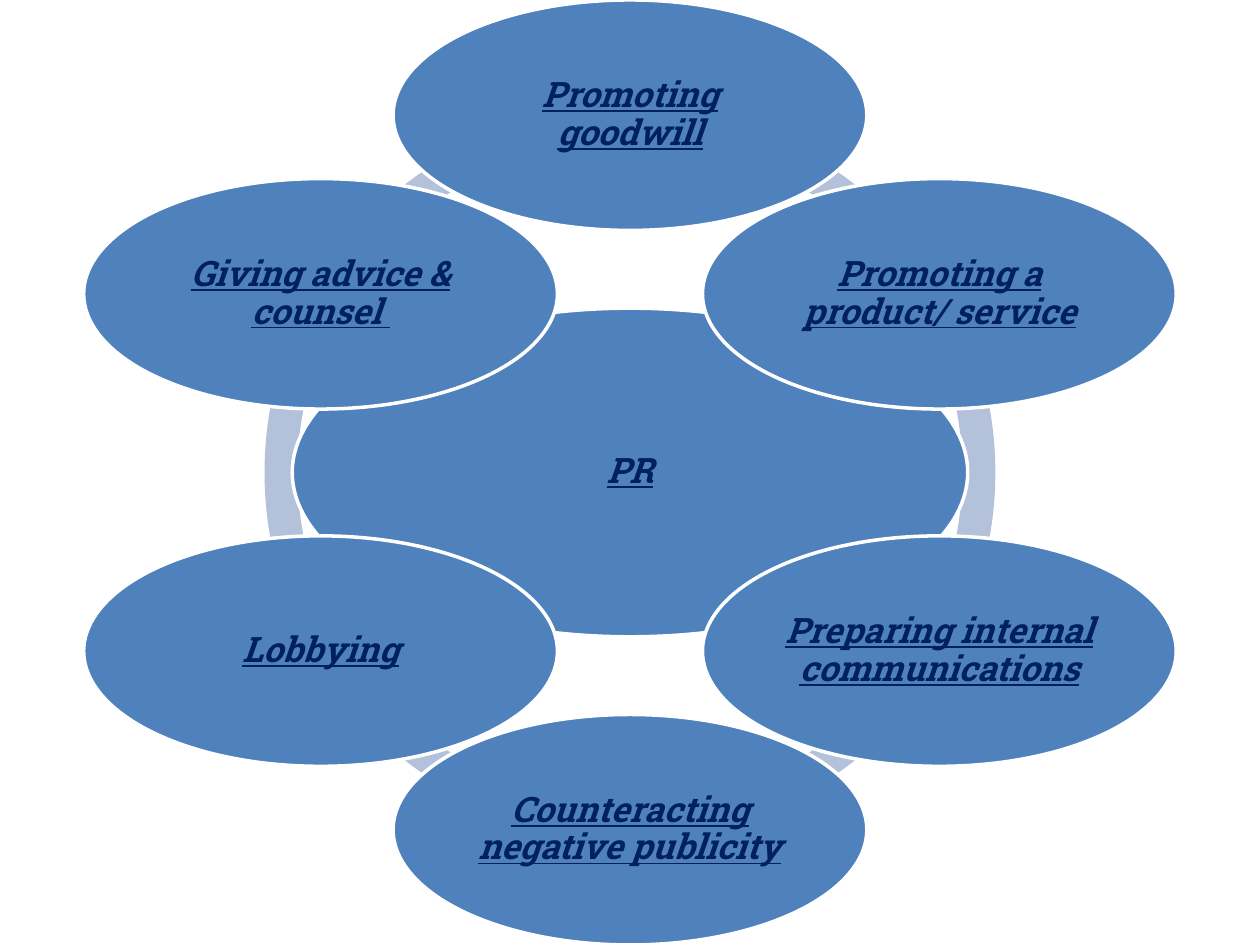
from math import cos, radians, sin

from pptx import Presentation
from pptx.dml.color import RGBColor
from pptx.enum.shapes import MSO_SHAPE as Shape
from pptx.enum.text import MSO_ANCHOR as Anchor, PP_ALIGN as Align
from pptx.util import Pt

WIDTH, HEIGHT = 720, 540
BLUE, NAVY, PALE, WHITE = "4F81BD", "002060", "B3C1DB", "FFFFFF"
ACTIVITIES = [
    "Promoting goodwill",
    "Promoting a product/ service",
    "Preparing internal communications",
    "Counteracting negative publicity",
    "Lobbying",
    "Giving advice & counsel ",
]


def color(hex_string):
    return RGBColor.from_string(hex_string)


def add_filled(slide, kind, center_x, center_y, width, height, fill):
    """Add a preset shape centred on the given point."""
    shape = slide.shapes.add_shape(
        kind, Pt(center_x - width / 2), Pt(center_y - height / 2), Pt(width), Pt(height))
    shape.shadow.inherit = False
    shape.fill.solid()
    shape.fill.fore_color.rgb = color(fill)
    return shape


def add_arc(slide, center_x, center_y, diameter, start, end):
    arc = add_filled(slide, Shape.BLOCK_ARC, center_x, center_y, diameter, diameter, PALE)
    arc.line.fill.background()
    # Angles are stored in 60000ths of a degree, adjustments in 100000ths.
    arc.adjustments[0] = start % 360 * 0.6
    arc.adjustments[1] = end % 360 * 0.6
    arc.adjustments[2] = 0.045


def add_oval(slide, center_x, center_y, width, height, text):
    oval = add_filled(slide, Shape.OVAL, center_x, center_y, width, height, BLUE)
    oval.line.color.rgb = color(WHITE)
    oval.line.width = Pt(2)

    frame = oval.text_frame
    frame.word_wrap = True
    frame.vertical_anchor = Anchor.MIDDLE
    frame.margin_left = frame.margin_right = Pt(2)
    frame.margin_top = frame.margin_bottom = Pt(2)

    paragraph = frame.paragraphs[0]
    paragraph.text = text
    paragraph.alignment = Align.CENTER
    paragraph.line_spacing = 0.9
    font = paragraph.font
    font.name = "Roboto Slab"
    font.size = Pt(20)
    font.bold = font.italic = font.underline = True
    font.color.rgb = color(NAVY)


def add_radial_cycle(slide, left, top, width, height, hub, labels):
    """Place the labels clockwise from the top, around a central hub."""
    center_x, center_y = left + width / 2, top + height / 2
    oval_width, oval_height = 270.7, 131.7
    radius = (height - oval_height) / 2
    step = 360 / len(labels)
    angles = [-90 + step * index for index in range(len(labels))]

    for angle in angles:
        add_arc(slide, center_x, center_y, 417.6, angle, angle + step)
    add_oval(slide, center_x, center_y, 386, 187.8, hub)
    for angle, label in zip(angles, labels):
        add_oval(slide, center_x + radius * cos(radians(angle)),
                 center_y + radius * sin(radians(angle)),
                 oval_width, oval_height, label)


def main():
    presentation = Presentation()
    presentation.slide_width, presentation.slide_height = Pt(WIDTH), Pt(HEIGHT)
    slide = presentation.slides.add_slide(presentation.slide_layouts[6])
    add_radial_cycle(slide, 0, 0, WIDTH, HEIGHT, "PR", ACTIVITIES)
    presentation.save("out.pptx")


if __name__ == "__main__":
    main()
